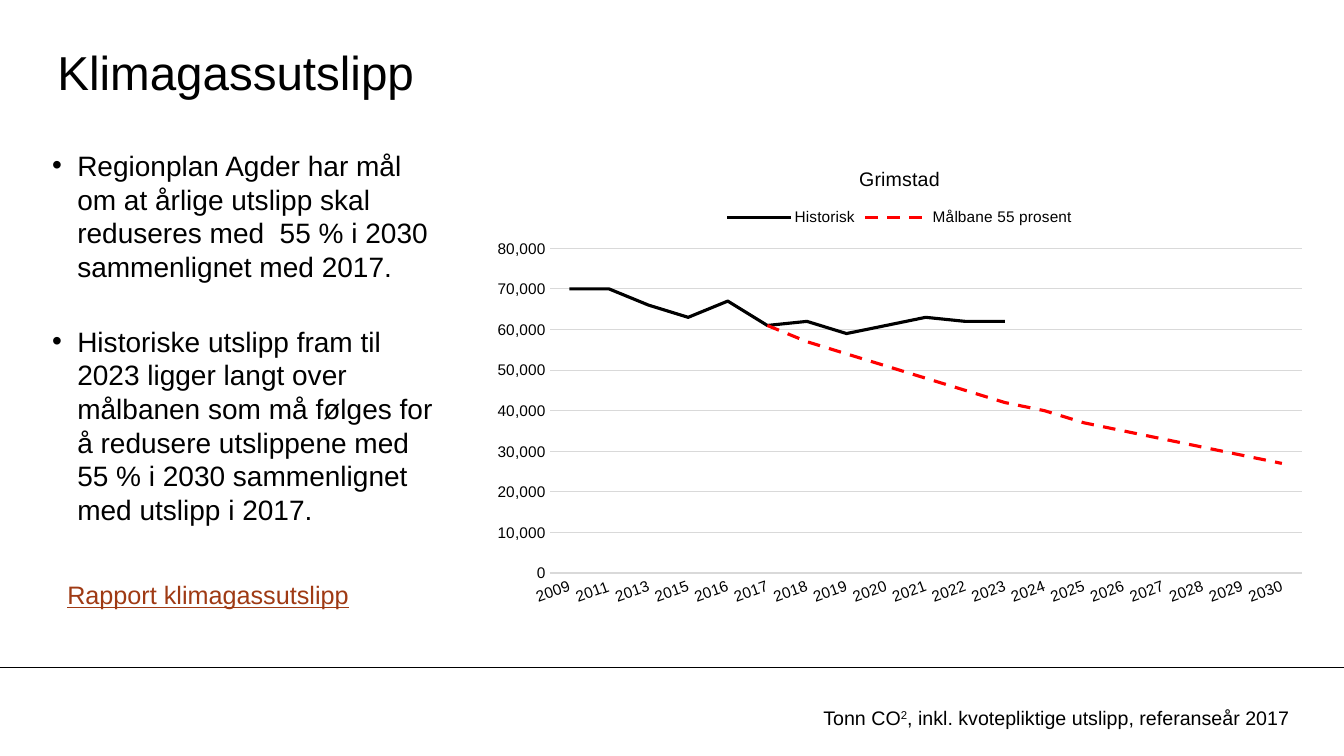
from dataclasses import dataclass
from lxml.etree import SubElement
from pptx import Presentation
from pptx.chart.data import CategoryChartData
from pptx.dml.color import RGBColor
from pptx.enum.chart import XL_CHART_TYPE, XL_LEGEND_POSITION, XL_MARKER_STYLE, XL_TICK_MARK
from pptx.enum.dml import MSO_LINE
from pptx.enum.shapes import MSO_CONNECTOR
from pptx.enum.text import MSO_ANCHOR, MSO_AUTO_SIZE, PP_ALIGN
from pptx.oxml.ns import qn
from pptx.util import Pt


@dataclass(frozen=True)
class Theme:
    font: str = "Arial"
    ink: RGBColor = RGBColor(0, 0, 0)
    link: RGBColor = RGBColor(0x9F, 0x3A, 0x14)
    target: RGBColor = RGBColor(0xFF, 0, 0)
    grid: RGBColor = RGBColor(0xD9, 0xD9, 0xD9)
    title_size: int = 34
    body_size: int = 20
    link_size: int = 18
    note_size: int = 14
    axis_size: int = 11
    chart_size: int = 10


THEME = Theme()
WIDTH, HEIGHT = 960, 540
TITLE = "Klimagassutslipp"
BULLETS = [
    "Regionplan Agder har mål om at årlige utslipp skal reduseres med  55 % i 2030 sammenlignet med 2017.",
    "Historiske utslipp fram til 2023 ligger langt over målbanen som må følges for å redusere utslippene med 55 % i 2030 sammenlignet med utslipp i 2017.",
]
LINK = "Rapport klimagassutslipp"
NOTE = ["Tonn CO", "2", ", inkl. kvotepliktige utslipp, referanseår 2017"]
CHART_TITLE = "Grimstad"
YEARS = [2009, 2011, 2013, *range(2015, 2031)]
HISTORY = [70000, 70000, 66000, 63000, 67000, 61000, 62000, 59000, 61000, 63000, 62000, 62000]
TARGET = [61000, 57000, 54000, 51000, 48000, 45000, 42000, 40000, 37000, 35000, 33000, 31000, 29000, 27000]
SERIES = [
    ("Historisk", HISTORY + [None] * (len(YEARS) - len(HISTORY)), THEME.ink, MSO_LINE.SOLID),
    ("Målbane 55 prosent", [None] * (len(YEARS) - len(TARGET)) + TARGET, THEME.target, MSO_LINE.DASH),
]
PLACES = {
    "title": (41, 24, 799, 54),
    "body": (37.2, 106, 280, 266.5),
    "link": (41, 410.4, 227.5, 29),
    "note": (581, 500.4, 366.5, 24.5),
    "chart": (343.4, 106, 598.4, 333.4),
}
RULE_TOP = 476.64
INDENT = 18
BULLET_GAP = 29.5
YEAR_TILT = -20


def place(name):
    return [Pt(length) for length in PLACES[name]]


def set_font(font, size, color=THEME.ink):
    font.name, font.size, font.bold = THEME.font, Pt(size), False
    font.color.rgb = color


def fill_placeholder(shape, name, anchor):
    shape.left, shape.top, shape.width, shape.height = place(name)
    frame = shape.text_frame
    frame.margin_left = frame.margin_top = frame.margin_right = frame.margin_bottom = 0
    frame.auto_size, frame.vertical_anchor, frame.word_wrap = MSO_AUTO_SIZE.NONE, anchor, True
    return frame


def add_text(page, name):
    frame = page.shapes.add_textbox(*place(name)).text_frame
    frame.word_wrap = True
    return frame.paragraphs[0]


def add_title(page):
    frame = fill_placeholder(page.shapes.title, "title", MSO_ANCHOR.MIDDLE)
    frame.text = TITLE
    frame.paragraphs[0].alignment = PP_ALIGN.LEFT
    set_font(frame.paragraphs[0].font, THEME.title_size)


def add_bullets(page):
    frame = fill_placeholder(page.placeholders[1], "body", MSO_ANCHOR.TOP)
    for index, text in enumerate(BULLETS):
        para = frame.paragraphs[0] if index == 0 else frame.add_paragraph()
        para.text = text
        para.line_spacing = 1.0
        para.space_before = Pt(BULLET_GAP if index else 0)
        properties = para._p.get_or_add_pPr()
        properties.set("marL", str(Pt(INDENT)))
        properties.set("indent", str(-Pt(INDENT)))
        SubElement(properties, qn("a:buChar"), char="•")
        set_font(para.font, THEME.body_size)


def add_rule(page):
    rule = page.shapes.add_connector(MSO_CONNECTOR.STRAIGHT, 0, Pt(RULE_TOP), Pt(WIDTH), Pt(RULE_TOP))
    rule.line.color.rgb, rule.line.width = THEME.ink, Pt(0.75)
    SubElement(rule._element.spPr, qn("a:effectLst"))


def add_link_and_note(page):
    para = add_text(page, "link")
    para.text = LINK
    set_font(para.font, THEME.link_size, THEME.link)
    para.font.underline = True
    para = add_text(page, "note")
    set_font(para.font, THEME.note_size)
    for text in NOTE:
        span = para.add_run()
        span.text = text
        if text == "2":
            span.font._element.set("baseline", "30000")


def add_emissions_chart(page):
    data = CategoryChartData()
    data.categories = [str(year) for year in YEARS]
    for name, values, _, _ in SERIES:
        data.add_series(name, values)
    chart = page.shapes.add_chart(XL_CHART_TYPE.LINE, *place("chart"), data).chart
    set_font(chart.font, THEME.chart_size)
    chart.has_title = True
    chart.chart_title.text_frame.text = CHART_TITLE
    set_font(chart.chart_title.text_frame.paragraphs[0].font, THEME.note_size)
    chart.chart_title.include_in_layout = False
    chart.has_legend = True
    chart.legend.position, chart.legend.include_in_layout = XL_LEGEND_POSITION.TOP, False
    set_font(chart.legend.font, THEME.axis_size)
    for axis, number_format in ((chart.category_axis, "0"), (chart.value_axis, "#,##0")):
        axis.major_tick_mark = axis.minor_tick_mark = XL_TICK_MARK.NONE
        axis.tick_labels.number_format = number_format
        axis.tick_labels.number_format_is_linked = False
        set_font(axis.tick_labels.font, THEME.axis_size)
    year_text = chart.category_axis._element.find(qn("c:txPr"))
    year_text.find(qn("a:bodyPr")).set("rot", str(YEAR_TILT * 60000))
    chart.value_axis.minimum_scale, chart.value_axis.maximum_scale = 0, 80000
    chart.value_axis.major_unit = 10000
    chart.value_axis.format.line.fill.background()
    for line in (chart.category_axis.format.line, chart.value_axis.major_gridlines.format.line):
        line.color.rgb, line.width = THEME.grid, Pt(0.75)
    chart.plots[0].vary_by_categories = False
    for series, (_, _, color, dash) in zip(chart.plots[0].series, SERIES):
        series.smooth = False
        series.marker.style = XL_MARKER_STYLE.NONE
        line = series.format.line
        line.color.rgb, line.width, line.dash_style = color, Pt(2.25), dash


def main():
    deck = Presentation()
    deck.slide_width, deck.slide_height = Pt(WIDTH), Pt(HEIGHT)
    page = deck.slides.add_slide(deck.slide_layouts[1])
    add_rule(page)
    add_title(page)
    add_bullets(page)
    add_link_and_note(page)
    add_emissions_chart(page)
    deck.save("out.pptx")


if __name__ == "__main__":
    main()
